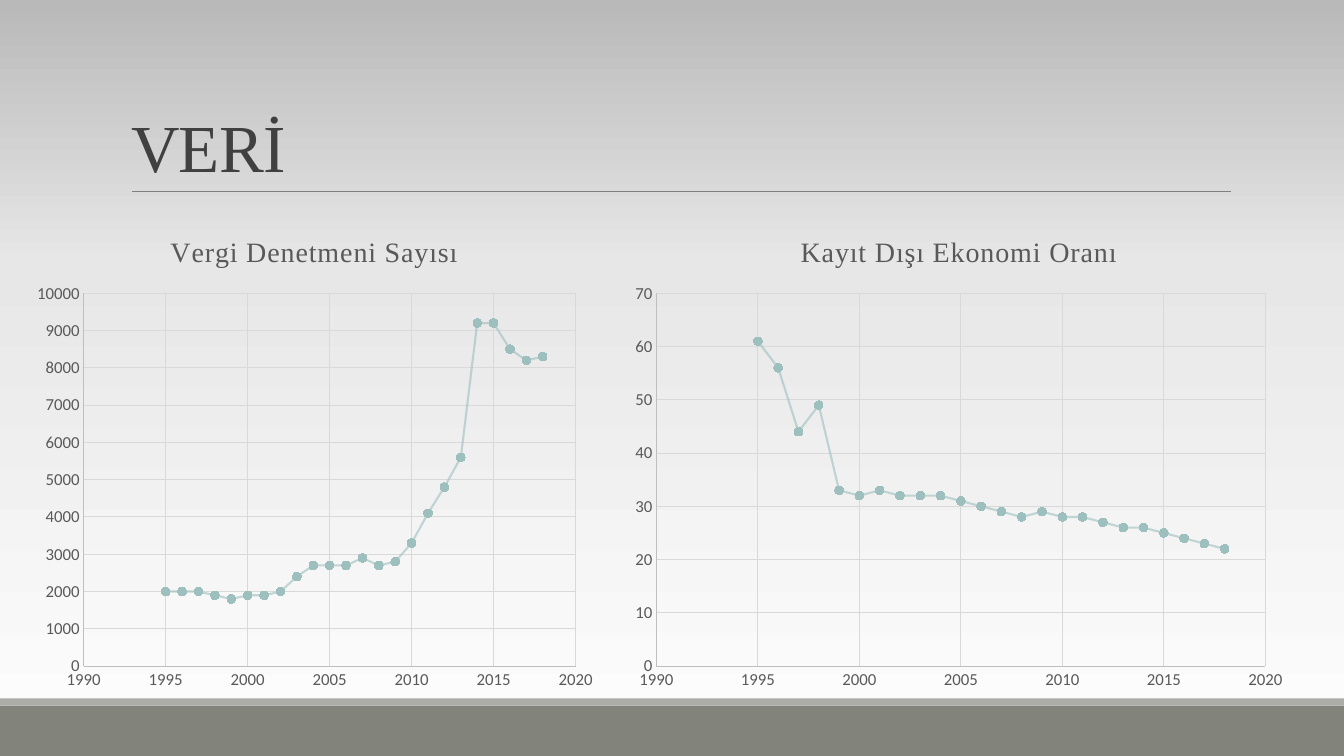
from dataclasses import dataclass

from lxml import etree
from pptx import Presentation
from pptx import util as u
from pptx.chart.data import XyChartData
from pptx.dml.color import RGBColor
from pptx.enum import chart as ch, shapes, text
from pptx.oxml.ns import qn

# Content; boxes are left, top, width, height in inches
HEADING = "VERİ"
FIRST_YEAR = 1995
CHARTS = [
    {
        "title": "Vergi Denetmeni Sayısı",
        "box": (0.24, 2.15, 5.76, 4.8),
        "plot": (0.83, 2.91, 4.88, 3.7),
        "title_at": (1.64, 2.27),
        "top": 10000, "step": 1000,
        "values": [2000, 2000, 2000, 1900, 1800, 1900, 1900, 2000,
                   2400, 2700, 2700, 2700, 2900, 2700, 2800, 3300,
                   4100, 4800, 5600, 9200, 9200, 8500, 8200, 8300],
    },
    {
        "title": "Kayıt Dışı Ekonomi Oranı",
        "box": (6.17, 2.15, 6.69, 4.8),
        "plot": (6.51, 2.91, 6.04, 3.7),
        "title_at": (7.89, 2.27),
        "top": 70, "step": 10,
        "values": [61, 56, 44, 49, 33, 32, 33, 32, 32, 32, 31, 30,
                   29, 28, 29, 28, 28, 27, 26, 26, 25, 24, 23, 22],
    },
]
BANDS = [(7, 0.5, "82847C"), (6.93, 0.07, "ACADA8")]  # top, height, colour


@dataclass(frozen=True)
class Theme:
    serif: str = "Times New Roman"
    sans: str = "Calibri"
    heading: str = "404040"
    label: str = "595959"
    rule: str = "808080"
    axis: str = "BFBFBF"
    grid: str = "D9D9D9"
    series: str = "9DBFBE"
    backdrop: tuple = ((0, "FEFEFE"), (65, "E7E7E7"), (100, "B9B9B9"))
    heading_size: int = 48
    chart_title_size: int = 20
    label_size: int = 12


THEME = Theme()


def set_font(font, name, size, color):
    font.name, font.size, font.bold = name, u.Pt(size), False
    font.color.rgb = RGBColor.from_string(color)


def set_line(line, color, width):
    line.color.rgb = RGBColor.from_string(color)
    line.width = u.Pt(width)


def set_spacing(element, hundredths):
    for props in element.xpath(".//a:r/a:rPr"):
        props.set("spc", str(hundredths))


def add_layout(parent, index, settings):
    """Give a chart part a fixed place, as fractions of the chart."""
    for old in parent.findall(qn("c:layout")):
        parent.remove(old)
    layout = etree.Element(qn("c:layout"))
    manual = etree.SubElement(layout, qn("c:manualLayout"))
    for name, value in settings:
        etree.SubElement(manual, qn(f"c:{name}")).set("val", str(value))
    parent.insert(index, layout)


def style_axis(axis, low, high, step):
    axis.minimum_scale, axis.maximum_scale, axis.major_unit = low, high, step
    axis.major_tick_mark = axis.minor_tick_mark = ch.XL_TICK_MARK.NONE
    axis.has_major_gridlines = True
    set_line(axis.major_gridlines.format.line, THEME.grid, 0.75)
    set_line(axis.format.line, THEME.axis, 0.75)
    set_font(axis.tick_labels.font, THEME.sans, THEME.label_size, THEME.label)


def add_scatter(page, item):
    data = XyChartData()
    points = data.add_series(item["title"])
    for year, value in enumerate(item["values"], FIRST_YEAR):
        points.add_data_point(year, value)
    left, top, width, height = item["box"]
    chart = page.shapes.add_chart(
        ch.XL_CHART_TYPE.XY_SCATTER_LINES, *map(u.Inches, item["box"]), data).chart
    chart.has_legend = False
    chart.font.name, chart.font.size = THEME.sans, u.Pt(10)
    chart.plots[0].vary_by_categories = False
    style_axis(chart.category_axis, 1990, 2020, 5)
    style_axis(chart.value_axis, 0, item["top"], item["step"])

    # Series line and markers
    series = chart.plots[0].series[0]
    set_line(series.format.line, THEME.series, 1.5)
    for color in chart.element.xpath(".//c:ser/c:spPr/a:ln//a:srgbClr"):
        etree.SubElement(color, qn("a:alpha")).set("val", "60000")
    series.marker.style, series.marker.size = ch.XL_MARKER_STYLE.CIRCLE, 6
    series.marker.format.fill.solid()
    series.marker.format.fill.fore_color.rgb = RGBColor.from_string(THEME.series)
    set_line(series.marker.format.line, THEME.series, 0.75)

    # Chart title
    chart.has_title = True
    title = chart.chart_title
    title.include_in_layout = False
    title.text_frame.text = item["title"]
    span = title.text_frame.paragraphs[0].runs[0]
    set_font(span.font, THEME.serif, THEME.chart_title_size, THEME.label)
    set_spacing(title.element, 50)

    # Fixed places of title and plot
    x, y = item["title_at"]
    add_layout(title.element, 1, [
        ("xMode", "edge"), ("yMode", "edge"),
        ("x", (x - left) / width), ("y", (y - top) / height)])
    x, y, plot_width, plot_height = item["plot"]
    add_layout(chart.element.xpath(".//c:plotArea")[0], 0, [
        ("layoutTarget", "inner"), ("xMode", "edge"), ("yMode", "edge"),
        ("x", (x - left) / width), ("y", (y - top) / height),
        ("w", plot_width / width), ("h", plot_height / height)])


def main():
    deck = Presentation()
    deck.slide_width, deck.slide_height = u.Inches(13.33), u.Inches(7.5)
    page = deck.slides.add_slide(deck.slide_layouts.get_by_name("Title Only"))

    # Background gradient
    backdrop = page.background.fill
    backdrop.gradient()
    backdrop.gradient_angle = 90
    stops = page.element.xpath(".//p:bg//a:gsLst")[0]
    for old in list(stops):
        stops.remove(old)
    for position, color in THEME.backdrop:
        stop = etree.SubElement(stops, qn("a:gs"), pos=str(position * 1000))
        etree.SubElement(stop, qn("a:srgbClr"), val=color)

    # Bottom bands
    for top, height, color in BANDS:
        band = page.shapes.add_shape(shapes.MSO_SHAPE.RECTANGLE, 0, u.Inches(top),
                                     deck.slide_width, u.Inches(height))
        band.shadow.inherit = False
        band.fill.solid()
        band.fill.fore_color.rgb = RGBColor.from_string(color)
        band.line.fill.background()

    # Heading and the rule below it
    rule = page.shapes.add_connector(
        shapes.MSO_CONNECTOR.STRAIGHT, *map(u.Inches, (1.31, 1.9, 12.21, 1.9)))
    set_line(rule.line, THEME.rule, 0.5)
    etree.SubElement(rule.element.spPr, qn("a:effectLst"))
    box = page.shapes.title
    box.left, box.top, box.width, box.height = map(u.Inches, (1.2, 0.31, 11, 1.59))
    frame = box.text_frame
    frame.text = HEADING
    frame.auto_size = text.MSO_AUTO_SIZE.NONE
    frame.vertical_anchor = text.MSO_ANCHOR.BOTTOM
    para = frame.paragraphs[0]
    para.alignment, para.line_spacing = text.PP_ALIGN.LEFT, 0.85
    set_font(para.runs[0].font, THEME.serif, THEME.heading_size, THEME.heading)
    set_spacing(box.element, -50)

    # Charts
    for item in CHARTS:
        add_scatter(page, item)

    deck.save("out.pptx")


if __name__ == "__main__":
    main()
